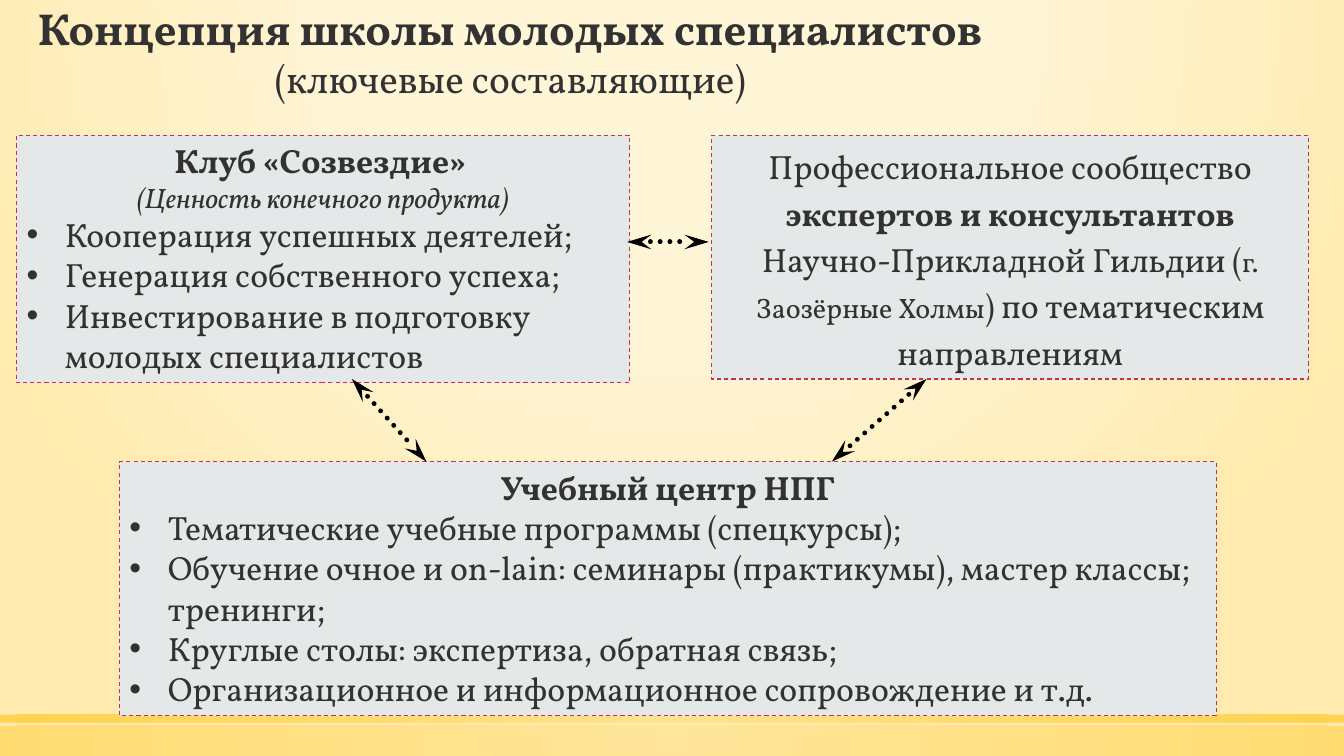
from lxml import etree
from pptx import Presentation
from pptx import util as u
from pptx.dml.color import RGBColor
from pptx.enum import dml, shapes, text
from pptx.oxml.ns import qn

COLORS = {
    "text": "323232", "box": "E5E8E8", "border": "C33059", "arrow": "000000",
    "cream": "FFF5D7", "sand": "FFEBAF", "light gold": "FFE186", "gold": "FFCD36",
}
RGB = {name: RGBColor.from_string(value) for name, value in COLORS.items()}
FONT = "Vollkorn"

prs = Presentation()
prs.slide_width, prs.slide_height = u.Inches(13.33), u.Inches(7.5)
COL, ROW = prs.slide_width / 100, prs.slide_height / 100
s = prs.slides.add_slide(prs.slide_layouts[5])


def grid(x, y, x2, y2):
    """Turn two pairs of slide percentages into lengths."""
    return int(x * COL), int(y * ROW), int(x2 * COL), int(y2 * ROW)


def radial(fill, element, stops, focus):
    """Give a fill circular gradient stops of (percent, color, opacity)."""
    fill.gradient()
    grad = element.find(".//" + qn("a:gradFill"))
    for child in list(grad):
        grad.remove(child)
    gs_list = etree.SubElement(grad, qn("a:gsLst"))
    for pos, color, opacity in stops:
        gs = etree.SubElement(gs_list, qn("a:gs"), pos=str(pos * 1000))
        clr = etree.SubElement(gs, qn("a:srgbClr"), val=COLORS[color])
        etree.SubElement(clr, qn("a:alpha"), val=str(opacity * 1000))
    path = etree.SubElement(grad, qn("a:path"), path="circle")
    edges = {side: str(share * 1000) for side, share in zip("ltrb", focus)}
    etree.SubElement(path, qn("a:fillToRect"), edges)


# Background and the two gold bars at the foot
radial(s.background.fill, s._element,
       [(0, "cream", 59), (40, "cream", 66), (100, "sand", 100)], (50, -80, 50, 180))
for top, height, opacity in [(96, 4, 50), (94.53, 1.07, 80)]:
    bar = s.shapes.add_shape(shapes.MSO_SHAPE.RECTANGLE, *grid(0, top, 100, height))
    bar.shadow.inherit = False
    bar.line.fill.background()
    radial(bar.fill, bar._element,
           [(0, "light gold", opacity), (100, "gold", opacity)], (50, 50, 50, 50))

# Title
title = s.shapes.title
title.left, title.top, title.width, title.height = grid(1.28, -0.67, 73.4, 14.8)
tf = title.text_frame
tf.word_wrap = True
tf.auto_size = text.MSO_AUTO_SIZE.SHAPE_TO_FIT_TEXT
tf.vertical_anchor = text.MSO_ANCHOR.MIDDLE
p = tf.paragraphs[0]
p.alignment = text.PP_ALIGN.CENTER
for words, size, bold in [("Концепция школы молодых специалистов ", 32, True),
                          ("(ключевые составляющие)", 28, False)]:
    r = p.add_run()
    r.text = words
    r.font.name, r.font.size, r.font.bold = FONT, u.Pt(size), bold
    r.font.color.rgb = RGB["text"]

# Boxes: place, line spacing, centred paragraphs of (words, size, style), bullets
BOXES = [
    ((1.24, 17.87, 45.6, 32.8), 1.0,
     [[("Клуб «Созвездие» ", 24, "bold")],
      [("(Ценность конечного продукта)", 20, "italic")]],
     ["Кооперация успешных деятелей;",
      "Генерация собственного успеха;",
      "Инвестирование в подготовку молодых специалистов"]),
    ((52.96, 17.87, 44.4, 32.27), 1.15,
     [[("Профессиональное сообщество ", 24, ""),
       ("экспертов и консультантов ", 24, "bold"),
       ("Научно-Прикладной Гильдии (", 24, ""),
       ("г. Заозёрные Холмы", 20, ""),
       (") по тематическим направлениям", 24, "")]],
     []),
    ((8.9, 61.07, 81.6, 33.6), 1.0,
     [[("Учебный центр НПГ", 24, "bold")]],
     ["Тематические учебные программы (спецкурсы);",
      "Обучение очное и on-lain: семинары (практикумы), мастер классы; тренинги;",
      "Круглые столы: экспертиза, обратная связь;",
      "Организационное и информационное сопровождение и т.д."]),
]
INDENT = u.Inches(0.38)
for place, spacing, headings, bullets in BOXES:
    sp = s.shapes.add_shape(shapes.MSO_SHAPE.RECTANGLE, *grid(*place))
    sp.shadow.inherit = False
    sp.fill.solid()
    sp.fill.fore_color.rgb = RGB["box"]
    sp.line.color.rgb = RGB["border"]
    sp.line.width = u.Pt(0.75)
    sp.line.dash_style = dml.MSO_LINE.DASH
    tf = sp.text_frame
    tf.word_wrap = True
    tf.auto_size = text.MSO_AUTO_SIZE.SHAPE_TO_FIT_TEXT
    tf.vertical_anchor = text.MSO_ANCHOR.TOP
    for i, runs in enumerate(headings + [[(words, 24, "")] for words in bullets]):
        p = tf.add_paragraph() if i else tf.paragraphs[0]
        p.line_spacing = spacing
        p.font.name = FONT
        p.font.color.rgb = RGB["text"]
        if i < len(headings):
            p.alignment = text.PP_ALIGN.CENTER
        else:
            p.alignment = text.PP_ALIGN.LEFT
            pPr = p._p.get_or_add_pPr()
            pPr.set("marL", str(INDENT))
            pPr.set("indent", str(-INDENT))
            marks = [etree.Element(qn("a:buFont"), typeface="Arial"),
                     etree.Element(qn("a:buChar"), char="•")]
            for mark in marks:
                pPr.find(qn("a:defRPr")).addprevious(mark)
        for words, size, style in runs:
            r = p.add_run()
            r.text = words
            r.font.name, r.font.size = FONT, u.Pt(size)
            r.font.bold, r.font.italic = style == "bold", style == "italic"
            r.font.color.rgb = RGB["text"]

# Dotted double-headed arrows between the boxes
for ends in [(46.65, 32, 52.74, 32),
             (26.18, 50.13, 31.73, 61.07),
             (68.94, 50.13, 61.89, 61.07)]:
    arrow = s.shapes.add_connector(shapes.MSO_CONNECTOR.STRAIGHT, *grid(*ends))
    arrow.line.color.rgb = RGB["arrow"]
    arrow.line.width = u.Pt(3.5)
    arrow.line.dash_style = dml.MSO_LINE.ROUND_DOT
    ln = arrow.line._get_or_add_ln()
    ln.set("cap", "rnd")
    for end in ("a:headEnd", "a:tailEnd"):
        etree.SubElement(ln, qn(end), type="stealth", w="med", len="lg")
    etree.SubElement(arrow._element.spPr, qn("a:effectLst"))

prs.save("out.pptx")
